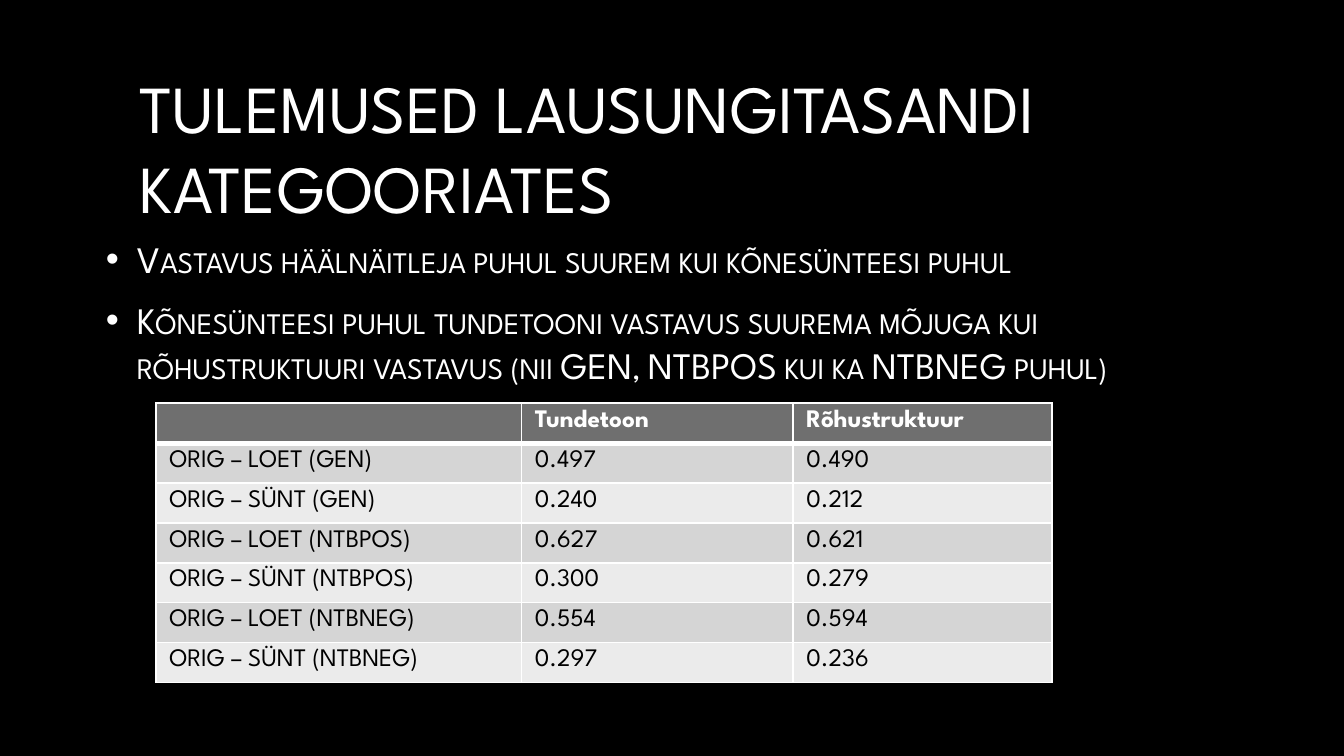
from dataclasses import dataclass

import pptx
import pptx.dml.color
import pptx.enum.text
import pptx.oxml
import pptx.oxml.ns
import pptx.util
from pptx.util import Inches


@dataclass(frozen=True)
class Theme:
    font: str = "League Spartan"
    background: str = "000000"
    light: str = "FFFFFF"
    dark: str = "000000"
    header: str = "6F6F6F"
    bands: tuple = ("D5D5D5", "EBEBEB")
    title_size: float = 36
    body_size: float = 20
    table_size: float = 13.5


THEME = Theme()

TITLE = "TULEMUSED LAUSUNGITASANDI KATEGOORIATES"
FINDINGS = [
    "Vastavus häälnäitleja puhul suurem kui kõnesünteesi puhul",
    "Kõnesünteesi puhul tundetooni vastavus suurema mõjuga kui "
    "rõhustruktuuri vastavus (nii GEN, NTBPOS kui ka NTBNEG puhul)",
]
AGREEMENT = [
    ("", "Tundetoon", "Rõhustruktuur"),
    ("ORIG – LOET (GEN)", "0.497", "0.490"),
    ("ORIG – SÜNT (GEN)", "0.240", "0.212"),
    ("ORIG – LOET (NTBPOS)", "0.627", "0.621"),
    ("ORIG – SÜNT (NTBPOS)", "0.300", "0.279"),
    ("ORIG – LOET (NTBNEG)", "0.554", "0.594"),
    ("ORIG – SÜNT (NTBNEG)", "0.297", "0.236"),
]
COLUMN_WIDTHS = (2.72, 2.02, 1.93)


def rgb(value):
    return pptx.dml.color.RGBColor.from_string(value)


def xml(markup):
    """Parse one DrawingML element written with the a: prefix."""
    head, mark, rest = markup.partition(" ")
    return pptx.oxml.parse_xml(f"{head} {pptx.oxml.ns.nsdecls('a')}{mark}{rest}")


def write(paragraph, text, *, size, color, bold=False, small_caps=False):
    run = paragraph.add_run()
    run.text = text
    run.font.name = THEME.font
    run.font.size = pptx.util.Pt(size)
    run.font.bold = bold
    run.font.color.rgb = rgb(color)
    if small_caps:
        run.font._element.set("cap", "small")


def add_bullet(paragraph, indent):
    properties = paragraph._p.get_or_add_pPr()
    properties.set("marL", str(Inches(indent)))
    properties.set("indent", str(-Inches(indent)))
    properties.append(xml(f'<a:buClr ><a:srgbClr val="{THEME.light}"/></a:buClr>'))
    properties.append(xml('<a:buFont typeface="Arial"/>'))
    properties.append(xml('<a:buChar char="•"/>'))


def set_borders(cell, bottom):
    """Rule all four sides in white, with the bottom rule this many points wide."""
    properties = cell._tc.get_or_add_tcPr()
    for side, points in (("L", 1), ("R", 1), ("T", 1), ("B", bottom)):
        properties.append(xml(
            f'<a:ln{side} w="{pptx.util.Pt(points)}"><a:solidFill>'
            f'<a:srgbClr val="{THEME.light}"/></a:solidFill></a:ln{side}>'))


def place_title(slide, left, top, width, height):
    title = slide.shapes.title
    title.left, title.top = Inches(left), Inches(top)
    title.width, title.height = Inches(width), Inches(height)
    frame = title.text_frame
    frame.word_wrap = True
    frame.auto_size = pptx.enum.text.MSO_AUTO_SIZE.NONE
    frame.vertical_anchor = pptx.enum.text.MSO_ANCHOR.MIDDLE
    heading = frame.paragraphs[0]
    heading.alignment = pptx.enum.text.PP_ALIGN.LEFT
    write(heading, TITLE, size=THEME.title_size, color=THEME.light)


def place_findings(slide, left, top, width, height):
    findings = slide.shapes.add_textbox(
        Inches(left), Inches(top), Inches(width), Inches(height))
    frame = findings.text_frame
    frame.word_wrap = True
    frame.margin_top = 0
    for index, finding in enumerate(FINDINGS):
        paragraph = frame.add_paragraph() if index else frame.paragraphs[0]
        add_bullet(paragraph, 0.23)
        paragraph.space_before = pptx.util.Pt(4 if index else 0)
        paragraph.space_after = pptx.util.Pt(4.5)
        write(paragraph, finding, size=THEME.body_size, color=THEME.light,
              small_caps=True)


def place_agreement(slide, left, top, height):
    table = slide.shapes.add_table(
        len(AGREEMENT), len(COLUMN_WIDTHS), Inches(left), Inches(top),
        Inches(sum(COLUMN_WIDTHS)), Inches(height)).table
    for column, width in zip(table.columns, COLUMN_WIDTHS):
        column.width = Inches(width)
    for row, values in enumerate(AGREEMENT):
        is_header = row == 0
        fill = THEME.header if is_header else THEME.bands[(row - 1) % 2]
        for column, value in enumerate(values):
            cell = table.cell(row, column)
            cell.margin_top, cell.margin_bottom = Inches(0.05), 0
            set_borders(cell, bottom=3 if is_header else 1)
            cell.fill.solid()
            cell.fill.fore_color.rgb = rgb(fill)
            paragraph = cell.text_frame.paragraphs[0]
            paragraph.font.size = pptx.util.Pt(THEME.table_size)
            if value:
                write(paragraph, value, size=THEME.table_size, bold=is_header,
                      color=THEME.light if is_header else THEME.dark)


def main():
    deck = pptx.Presentation()
    deck.slide_width, deck.slide_height = Inches(10), Inches(10 * 9 / 16)
    slide = deck.slides.add_slide(deck.slide_layouts.get_by_name("Title Only"))
    slide.background.fill.solid()
    slide.background.fill.fore_color.rgb = rgb(THEME.background)
    place_title(slide, 0.94, 0.31, 8.12, 1.56)
    place_findings(slide, 0.69, 1.76, 8.62, 1.46)
    place_agreement(slide, 1.16, 3, 2.08)
    deck.save("out.pptx")


if __name__ == "__main__":
    main()
